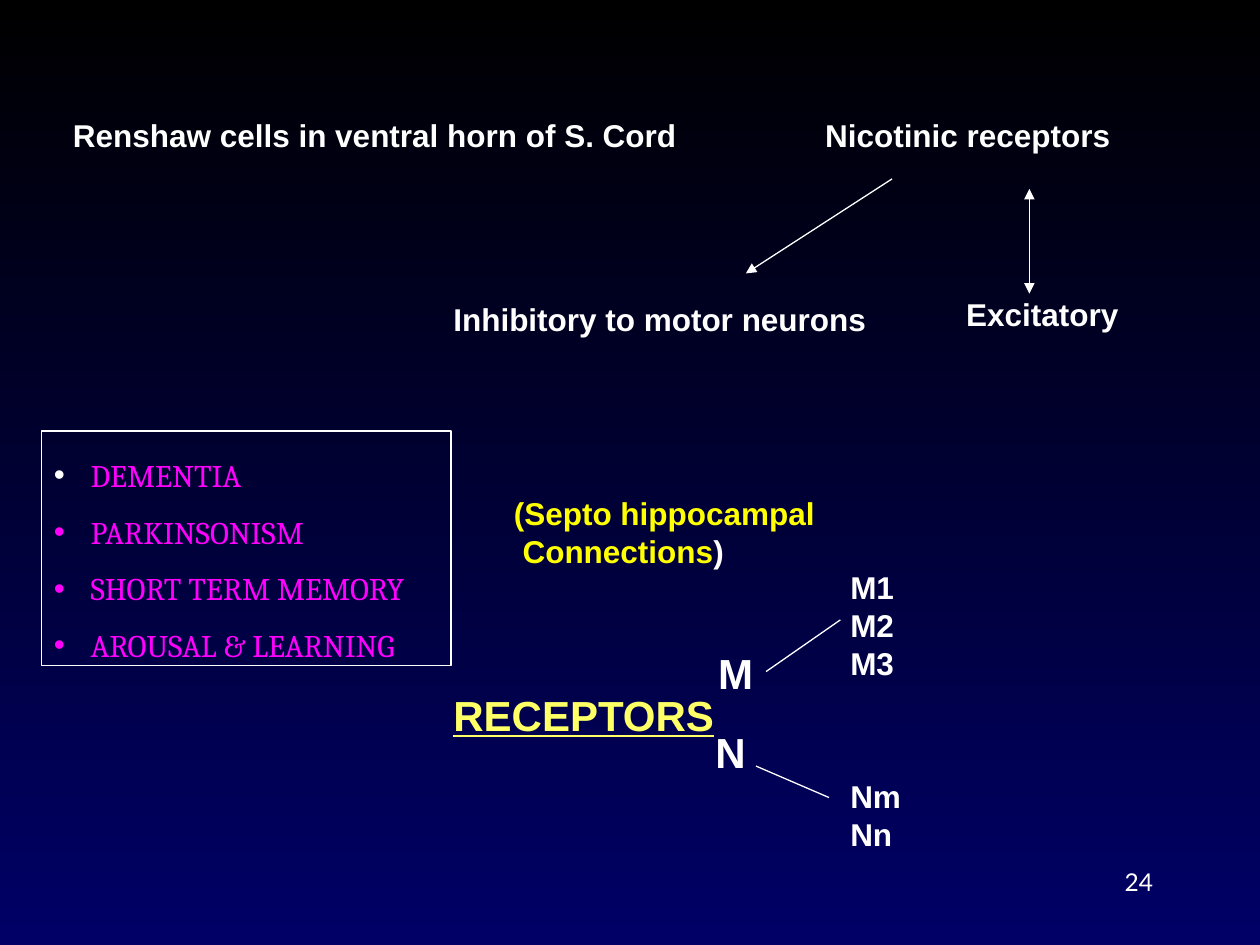
import dataclasses

import lxml.etree
import pptx
import pptx.dml.color
import pptx.enum.shapes
import pptx.enum.text
import pptx.oxml.ns
import pptx.util

Inches = pptx.util.Inches
Pt = pptx.util.Pt
qn = pptx.oxml.ns.qn


def rgb(value):
    return pptx.dml.color.RGBColor.from_string(value)


@dataclasses.dataclass(frozen=True)
class Theme:
    top: str = "000000"
    bottom: str = "000066"
    text: str = "FFFFFF"
    accent: str = "FF00FF"
    note: str = "FFFF00"
    heading: str = "FFFF66"
    font: str = "Arial"
    list_font: str = "Cambria"
    number_font: str = "Lato"
    small: int = 14
    body: int = 18
    large: int = 24
    line: float = 0.75


def add_element(parent, tag, **attributes):
    return lxml.etree.SubElement(parent, qn(tag), attributes)


class SlideBuilder:
    def __init__(self, slide, theme):
        self.s = slide
        self.theme = theme

    def background(self):
        fill = self.s.background.fill
        fill.gradient()
        fill.gradient_angle = 270
        for stop, color in zip(fill.gradient_stops, (self.theme.top, self.theme.bottom)):
            stop.color.rgb = rgb(color)

    def style(self, p, size=None, color=None, font=None, bold=True, underline=None):
        p.font.name = font or self.theme.font
        p.font.size = Pt(size or self.theme.body)
        p.font.bold = bold
        p.font.underline = underline
        p.font.color.rgb = rgb(color or self.theme.text)

    def text(self, left, top, width, height, lines, align=None, tab=None, **style):
        """Add a text box with one paragraph per line; return its last paragraph."""
        sp = self.s.shapes.add_textbox(Inches(left), Inches(top), Inches(width), Inches(height))
        tf = sp.text_frame
        tf.word_wrap = tab is not None or align is not None
        for i, line in enumerate(lines):
            p = tf.paragraphs[0] if i == 0 else tf.add_paragraph()
            p.text = line
            p.alignment = align
            if tab:
                tabs = add_element(p._p.get_or_add_pPr(), "a:tabLst")
                add_element(tabs, "a:tab", pos=str(Inches(tab)), algn="l")
            self.style(p, **style)
        return p

    def bullet_box(self, left, top, width, height, items, indent=0.29):
        """Add an outlined list from pairs of text and bullet colour."""
        sp = self.s.shapes.add_shape(
            pptx.enum.shapes.MSO_SHAPE.RECTANGLE,
            Inches(left), Inches(top), Inches(width), Inches(height))
        sp.shadow.inherit = False
        sp.fill.background()
        sp.line.color.rgb = rgb(self.theme.text)
        sp.line.width = Pt(self.theme.line)
        tf = sp.text_frame
        tf.word_wrap = True
        tf.vertical_anchor = pptx.enum.text.MSO_ANCHOR.TOP
        for i, (item, bullet_color) in enumerate(items):
            p = tf.paragraphs[0] if i == 0 else tf.add_paragraph()
            p.text = item
            p.alignment = pptx.enum.text.PP_ALIGN.LEFT
            p.line_spacing = 1.5
            pPr = p._p.get_or_add_pPr()
            pPr.set("marL", str(Inches(indent)))
            pPr.set("indent", str(-Inches(indent)))
            add_element(add_element(pPr, "a:buClr"), "a:srgbClr", val=bullet_color)
            add_element(pPr, "a:buFont", typeface=self.theme.font)
            add_element(pPr, "a:buChar", char="•")
            self.style(p, color=self.theme.accent, font=self.theme.list_font, bold=False)

    def line(self, x1, y1, x2, y2, arrows=()):
        """Add a line; arrows names its arrow ends, a:headEnd before a:tailEnd."""
        line = self.s.shapes.add_connector(
            pptx.enum.shapes.MSO_CONNECTOR.STRAIGHT,
            Inches(x1), Inches(y1), Inches(x2), Inches(y2))
        line.line.color.rgb = rgb(self.theme.text)
        line.line.width = Pt(self.theme.line)
        ln = line.line._get_or_add_ln()
        for end in arrows:
            add_element(ln, end, type="triangle")
        add_element(line._element.spPr, "a:effectLst")


def main():
    prs = pptx.Presentation()
    prs.slide_width, prs.slide_height = Inches(10), Inches(7.5)
    theme = Theme()
    b = SlideBuilder(prs.slides.add_slide(prs.slide_layouts[6]), theme)
    b.background()

    b.text(7.17, 6.83, 2.08, 0.5, ["24"], align=pptx.enum.text.PP_ALIGN.RIGHT,
           size=theme.small, font=theme.number_font, bold=False)

    b.text(0.48, 0.87, 8.51, 0.4,
           ["Renshaw cells in ventral horn of S. Cord\tNicotinic receptors"], tab=5.97)
    b.text(3.5, 2.33, 3.48, 0.4, ["Inhibitory to motor neurons"])
    b.text(7.57, 2.29, 1.41, 0.4, ["Excitatory"])
    b.line(8.17, 2.33, 8.17, 1.5, arrows=("a:headEnd", "a:tailEnd"))
    b.line(7.08, 1.42, 5.92, 2.17, arrows=("a:tailEnd",))

    b.bullet_box(0.33, 3.42, 3.25, 1.86, [
        ("DEMENTIA", theme.text),
        ("PARKINSONISM", theme.accent),
        ("SHORT TERM MEMORY", theme.accent),
        ("AROUSAL & LEARNING", theme.accent),
    ])
    p = b.text(3.98, 3.87, 2.59, 0.7, ["(Septo hippocampal\v Connections"], color=theme.note)
    r = p.add_run()
    r.text = ")"
    r.font.color.rgb = rgb(theme.text)

    b.text(3.5, 5.42, 2.28, 0.5, ["RECEPTORS"], size=theme.large,
           color=theme.heading, underline=True)
    b.text(5.6, 5.09, 0.48, 0.5, ["M"], size=theme.large)
    b.text(5.58, 5.72, 0.44, 0.5, ["N"], size=theme.large)
    b.line(6.08, 5.33, 6.67, 4.92)
    b.text(6.65, 4.46, 0.55, 1, ["M1", "M2", "M3"])
    b.text(6.65, 6.12, 0.6, 0.7, ["Nm", "Nn"])
    b.line(6, 6.08, 6.58, 6.33)

    prs.save("out.pptx")


if __name__ == "__main__":
    main()
